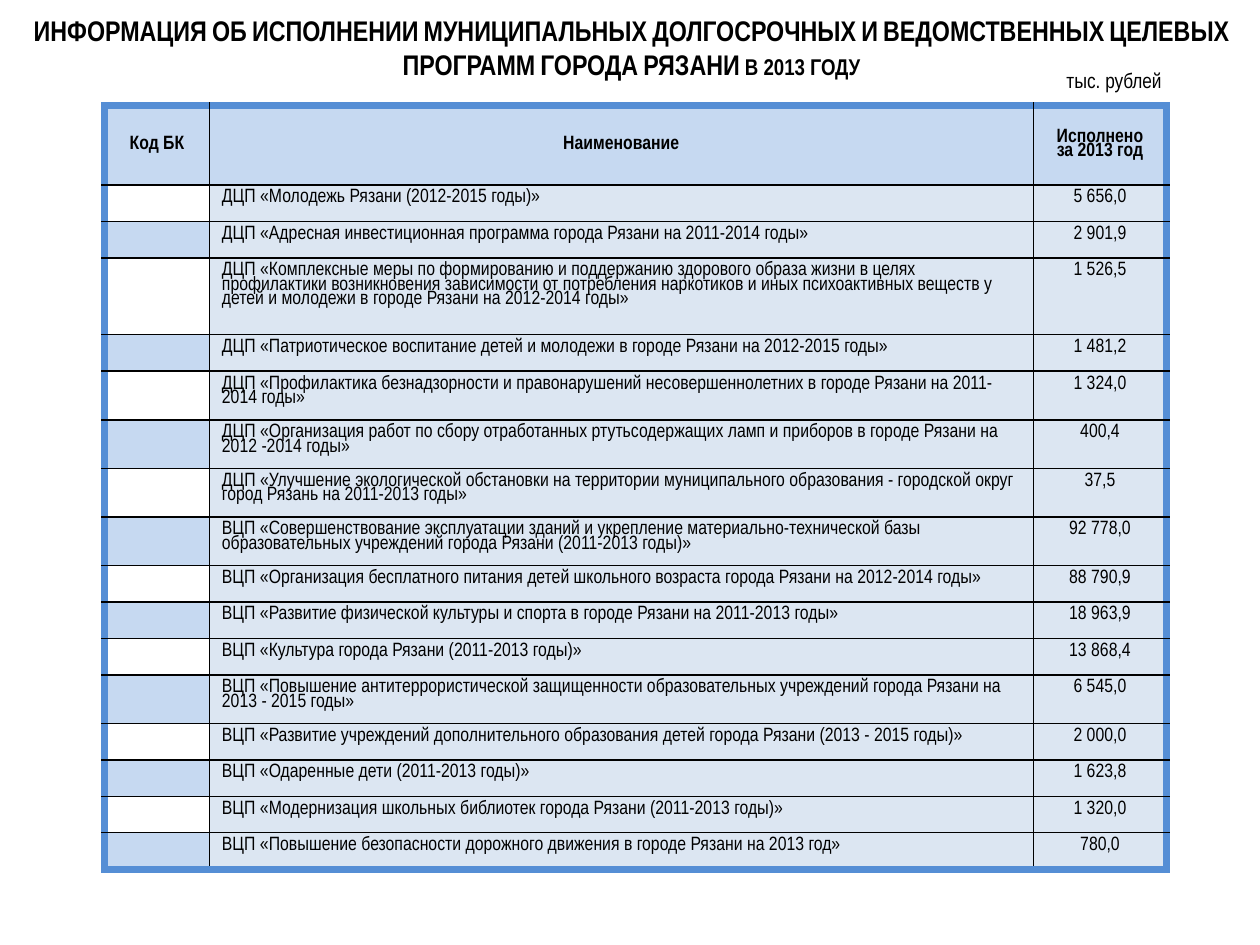
"""Build the slide on the city programmes carried out in 2013."""
from dataclasses import dataclass

from lxml import etree
from pptx import Presentation
from pptx.dml.color import RGBColor
from pptx.enum.text import MSO_ANCHOR, PP_ALIGN
from pptx.oxml.ns import qn
from pptx.util import Cm, Pt

BLACK = RGBColor(0x00, 0x00, 0x00)
WHITE = RGBColor(0xFF, 0xFF, 0xFF)
BLUE = RGBColor(0x55, 0x8E, 0xD5)
SKY = RGBColor(0xC6, 0xD9, 0xF1)
PALE = RGBColor(0xDC, 0xE6, 0xF2)
LEFT, CENTER = PP_ALIGN.LEFT, PP_ALIGN.CENTER
TOP, MIDDLE = MSO_ANCHOR.TOP, MSO_ANCHOR.MIDDLE
FONT = "Arial Narrow"
SIZE = 11
ONE, TWO = 0.62, 0.98
WIDTHS = (2.11, 16.61, 2.69)
HEADS = ("Код БК", "Наименование", "Исполнено\nза 2013 год")


@dataclass
class Plan:
    """One programme with its sum and row height in cm."""
    name: str
    total: str
    height: float = ONE


PLANS = (
    Plan("ДЦП «Молодежь Рязани (2012-2015 годы)»", "5 656,0", 0.65),
    Plan("ДЦП «Адресная инвестиционная программа города Рязани на 2011-2014 годы»", "2 901,9", 0.73),
    Plan("ДЦП «Комплексные меры по формированию и поддержанию здорового образа жизни в целях "
         "профилактики возникновения зависимости от потребления наркотиков и иных психоактивных "
         "веществ у детей и молодежи в городе Рязани на 2012-2014 годы»", "1 526,5", 1.55),
    Plan("ДЦП «Патриотическое воспитание детей и молодежи в городе Рязани на 2012-2015 годы»", "1 481,2"),
    Plan("ДЦП «Профилактика безнадзорности и правонарушений несовершеннолетних в городе Рязани "
         "на 2011-2014 годы»", "1 324,0", TWO),
    Plan("ДЦП «Организация работ по сбору отработанных ртутьсодержащих ламп и приборов в городе "
         "Рязани на 2012 -2014 годы»", "400,4", TWO),
    Plan("ДЦП «Улучшение экологической обстановки на территории муниципального образования - "
         "городской округ город Рязань на 2011-2013 годы»", "37,5", TWO),
    Plan("ВЦП «Совершенствование эксплуатации зданий и укрепление материально-технической базы "
         "образовательных учреждений города Рязани (2011-2013 годы)»", "92 778,0", TWO),
    Plan("ВЦП «Организация бесплатного питания детей школьного возраста города Рязани "
         "на 2012-2014 годы»", "88 790,9"),
    Plan("ВЦП «Развитие физической культуры и спорта в городе Рязани на 2011-2013 годы»", "18 963,9"),
    Plan("ВЦП «Культура города Рязани (2011-2013 годы)»", "13 868,4"),
    Plan("ВЦП «Повышение антитеррористической защищенности образовательных учреждений города "
         "Рязани на 2013 - 2015 годы»", "6 545,0", TWO),
    Plan("ВЦП «Развитие учреждений дополнительного образования детей города Рязани "
         "(2013 - 2015 годы)»", "2 000,0"),
    Plan("ВЦП «Одаренные дети (2011-2013 годы)»", "1 623,8"),
    Plan("ВЦП «Модернизация школьных библиотек города Рязани (2011-2013 годы)»", "1 320,0"),
    Plan("ВЦП «Повышение безопасности дорожного движения в городе Рязани на 2013 год»", "780,0"),
)


def add_run(para, text: str, size: float, bold: bool = False):
    """Add one black run to a paragraph."""
    run = para.add_run()
    run.text = text
    font = run.font
    font.name, font.size, font.bold = FONT, Pt(size), bold
    font.color.rgb = BLACK
    return run


def add_edge(cell, side: str, outer: bool) -> None:
    """Draw one cell border, thick and blue on the outside."""
    color, width = (BLUE, 4.5) if outer else (BLACK, 1)
    props = cell._tc.get_or_add_tcPr()
    line = etree.SubElement(props, qn(f"a:ln{side}"), w=str(Pt(width)))
    fill = etree.SubElement(line, qn("a:solidFill"))
    etree.SubElement(fill, qn("a:srgbClr"), val=str(color))


def fill_cell(cell, text: str, color: RGBColor, align, head: bool, outer: dict[str, bool]) -> None:
    """Set borders, fill and text of one cell."""
    for side, flag in outer.items():
        add_edge(cell, side, flag)
    cell.fill.solid()
    cell.fill.fore_color.rgb = color
    cell.vertical_anchor = MIDDLE if head else TOP
    frame = cell.text_frame
    for index, part in enumerate(text.split("\n")):
        para = frame.add_paragraph() if index else frame.paragraphs[0]
        para.alignment = align
        para.line_spacing = 0.8
        if part:
            add_run(para, part, SIZE, head)
        else:
            etree.SubElement(para._p, qn("a:endParaRPr"), sz=str(SIZE * 100))


def add_grid(slide) -> None:
    """Add the table of programmes."""
    rows = [HEADS] + [("", plan.name, plan.total) for plan in PLANS]
    tall = [1.6] + [plan.height for plan in PLANS]
    frame = slide.shapes.add_table(len(rows), len(WIDTHS), Cm(2.11), Cm(2.13),
                                   Cm(sum(WIDTHS)), Cm(sum(tall)))
    grid = frame.table
    for col, width in zip(grid.columns, WIDTHS):
        col.width = Cm(width)
    for r, (row, height) in enumerate(zip(rows, tall)):
        grid.rows[r].height = Cm(height)
        head = r == 0
        for c, text in enumerate(row):
            color = SKY if head else PALE
            if c == 0:
                color = WHITE if r % 2 else SKY
            align = LEFT if c == 1 and not head else CENTER
            outer = {"L": c == 0, "R": c == len(WIDTHS) - 1,
                     "T": head, "B": r == len(rows) - 1}
            fill_cell(grid.cell(r, c), text, color, align, head, outer)


def add_title(slide) -> None:
    """Fill and place the title."""
    title = slide.shapes.title
    title.left, title.top, title.width, title.height = Cm(0.08), Cm(0.13), Cm(25.3), Cm(1.2)
    frame = title.text_frame
    frame.word_wrap = True
    frame.vertical_anchor = TOP
    para = frame.paragraphs[0]
    para.alignment = CENTER
    run = add_run(para, "ИНФОРМАЦИЯ ОБ ИСПОЛНЕНИИ МУНИЦИПАЛЬНЫХ ДОЛГОСРОЧНЫХ И ВЕДОМСТВЕННЫХ "
                  "ЦЕЛЕВЫХ ПРОГРАММ ГОРОДА РЯЗАНИ в 2013 году", 16.2, True)
    run._r.get_or_add_rPr().set("cap", "small")


def add_unit(slide) -> None:
    """Add the unit of the sums."""
    box = slide.shapes.add_textbox(Cm(20.3), Cm(1.12), Cm(4.32), Cm(1))
    frame = box.text_frame
    frame.word_wrap = True
    frame.vertical_anchor = MIDDLE
    para = frame.paragraphs[0]
    para.alignment = CENTER
    add_run(para, "тыс. рублей", 12)


def main() -> None:
    """Build and save the deck."""
    deck = Presentation()
    deck.slide_width, deck.slide_height = Cm(25.4), Cm(19.05)
    slide = deck.slides.add_slide(deck.slide_layouts[5])
    add_title(slide)
    add_grid(slide)
    add_unit(slide)
    deck.save("out.pptx")


if __name__ == "__main__":
    main()
